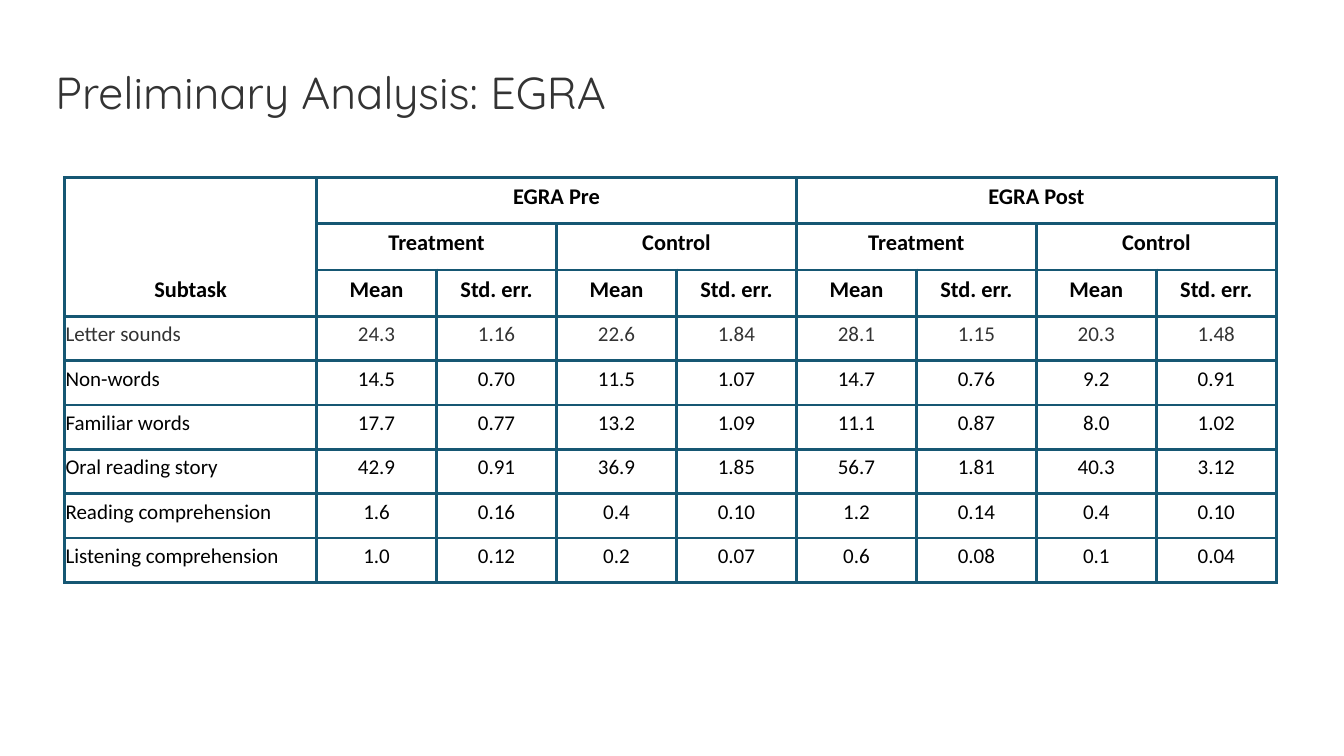
from lxml.etree import fromstring
from pptx import Presentation
from pptx.dml.color import RGBColor
from pptx.enum.text import MSO_ANCHOR, PP_ALIGN
from pptx.util import Inches, Pt

COLORS = {"title": "333333", "text": "000000", "muted": "333333", "border": "165773"}
DRAWING = "http://schemas.openxmlformats.org/drawingml/2006/main"

HEADINGS = [
    (0, 0, 3, 1, "Subtask"),
    (0, 1, 1, 4, "EGRA Pre"),
    (0, 5, 1, 4, "EGRA Post"),
]
for group in range(4):
    first = 1 + 2 * group
    HEADINGS.append((1, first, 1, 2, ("Treatment", "Control")[group % 2]))
    HEADINGS.append((2, first, 1, 1, "Mean"))
    HEADINGS.append((2, first + 1, 1, 1, "Std. err."))

SUBTASKS = [
    ("Letter sounds", "24.3", "1.16", "22.6", "1.84", "28.1", "1.15", "20.3", "1.48"),
    ("Non-words", "14.5", "0.70", "11.5", "1.07", "14.7", "0.76", "9.2", "0.91"),
    ("Familiar words", "17.7", "0.77", "13.2", "1.09", "11.1", "0.87", "8.0", "1.02"),
    ("Oral reading story", "42.9", "0.91", "36.9", "1.85", "56.7", "1.81", "40.3", "3.12"),
    ("Reading comprehension", "1.6", "0.16", "0.4", "0.10", "1.2", "0.14", "0.4", "0.10"),
    ("Listening comprehension", "1.0", "0.12", "0.2", "0.07", "0.6", "0.08", "0.1", "0.04"),
]
HEADER_ROWS = 3
ROW_HEIGHTS = [0.46] * HEADER_ROWS + [0.44] * len(SUBTASKS)
COLUMN_WIDTHS = [2.5] + [1.19] * 8


def write_text(frame, text, font="Calibri", size=15, color="text", bold=False,
               align=PP_ALIGN.CENTER, spacing=1.15):
    para = frame.paragraphs[0]
    para.alignment = align
    para.line_spacing = spacing
    span = para.add_run()
    span.text = text
    span.font.name = font
    span.font.size = Pt(size)
    span.font.bold = bold
    span.font.color.rgb = RGBColor.from_string(COLORS[color])


def format_cell(cell):
    cell.fill.background()
    cell.vertical_anchor = MSO_ANCHOR.BOTTOM
    cell.margin_left = cell.margin_right = cell.margin_top = Inches(0.01)
    cell.margin_bottom = Inches(0.13)
    properties = cell._tc.get_or_add_tcPr()
    for index, side in enumerate(("lnL", "lnR", "lnT", "lnB")):
        properties.insert(index, fromstring(
            f'<a:{side} xmlns:a="{DRAWING}" w="{Pt(2.25)}"><a:solidFill>'
            f'<a:srgbClr val="{COLORS["border"]}"/></a:solidFill></a:{side}>'))


deck = Presentation()
deck.slide_width = Inches(13.33)
deck.slide_height = Inches(7.5)
page = deck.slides.add_slide(deck.slide_layouts[5])

title = page.shapes.title
title.left, title.top = Inches(0.45), Inches(0.65)
title.width, title.height = Inches(12.42), Inches(0.83)
title.text_frame.vertical_anchor = MSO_ANCHOR.TOP
write_text(title.text_frame, "Preliminary Analysis: EGRA", font="Quicksand", size=32,
           color="title", align=PP_ALIGN.LEFT, spacing=0.9)

table = page.shapes.add_table(
    len(ROW_HEIGHTS), len(COLUMN_WIDTHS), Inches(0.64), Inches(1.76),
    Inches(sum(COLUMN_WIDTHS)), Inches(sum(ROW_HEIGHTS))).table
table.first_row = False
table.horz_banding = False
for column, width in zip(table.columns, COLUMN_WIDTHS):
    column.width = Inches(width)
for row, height in zip(table.rows, ROW_HEIGHTS):
    row.height = Inches(height)
for cell in table.iter_cells():
    format_cell(cell)

for top, left, rows, columns, heading in HEADINGS:
    cell = table.cell(top, left)
    if rows * columns > 1:
        cell.merge(table.cell(top + rows - 1, left + columns - 1))
    write_text(cell.text_frame, heading, size=16, bold=True)

for row_index, values in enumerate(SUBTASKS):
    for column_index, value in enumerate(values):
        write_text(table.cell(HEADER_ROWS + row_index, column_index).text_frame, value,
                   color="text" if row_index else "muted",
                   align=PP_ALIGN.CENTER if column_index else PP_ALIGN.LEFT)

deck.save("out.pptx")
